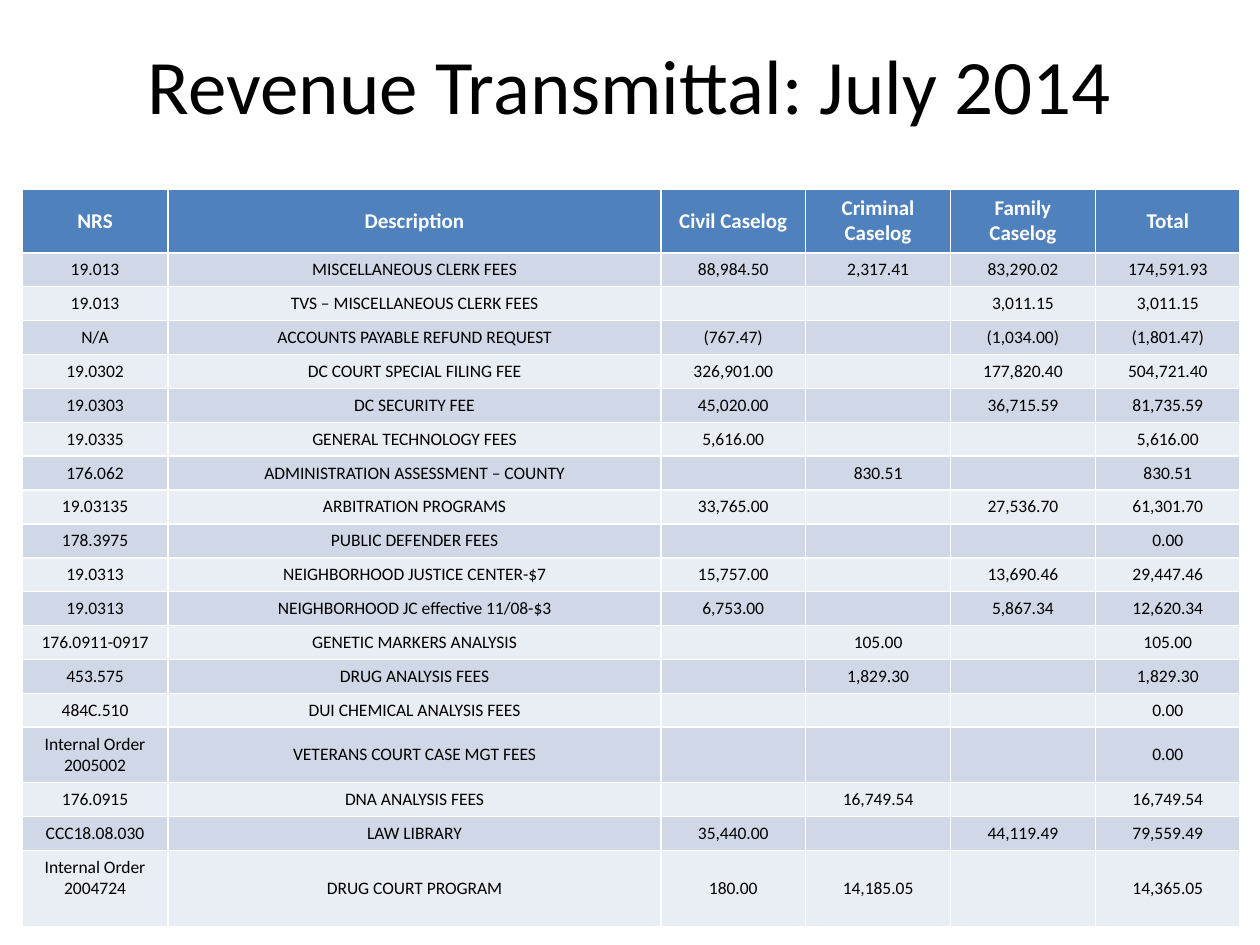
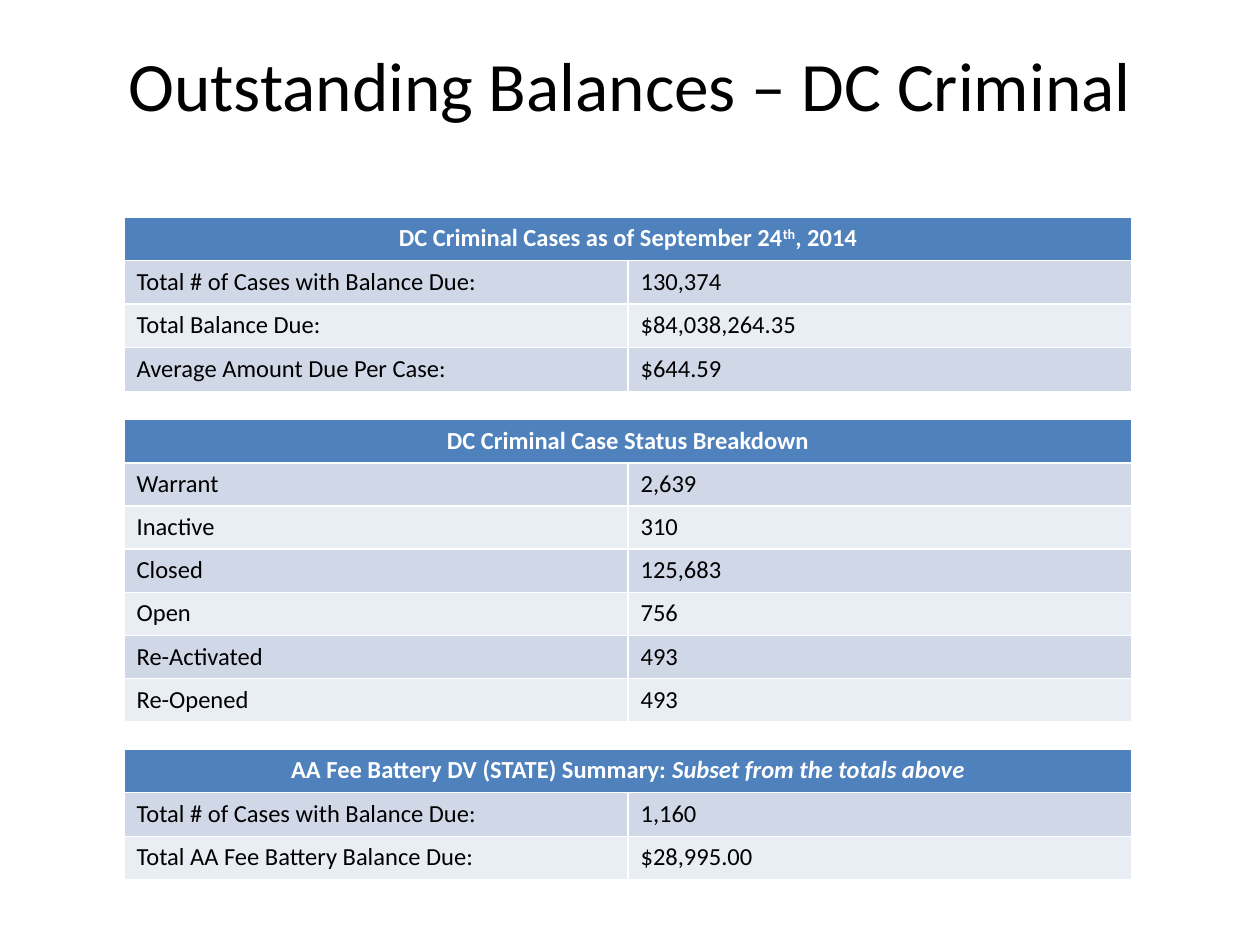
import pptx
import pptx.dml.color
import pptx.enum.text
import pptx.util

Cm = pptx.util.Cm
Pt = pptx.util.Pt
RGBColor = pptx.dml.color.RGBColor
Align = pptx.enum.text.PP_ALIGN
Anchor = pptx.enum.text.MSO_ANCHOR

# Shared look
FONT = "Calibri"
BLACK = RGBColor(0x00, 0x00, 0x00)
WHITE = RGBColor(0xFF, 0xFF, 0xFF)
HEADER_BLUE = RGBColor(0x4F, 0x81, 0xBD)
BANDS = (RGBColor(0xD0, 0xD8, 0xE8), RGBColor(0xE9, 0xED, 0xF4))
TITLE_ONLY = 5

# Revenue slide: sizes in centimetres
REVENUE_COLUMNS = [2.95, 9.93] + [2.92] * 4
REVENUE_ROW = 0.68
REVENUE_HEADER = ["NRS", "Description", "Civil Caselog", "Criminal Caselog",
                  "Family Caselog", "Total"]
REVENUE_ROWS = [
    ["19.013", "MISCELLANEOUS CLERK FEES", "88,984.50", "2,317.41", "83,290.02", "174,591.93"],
    ["19.013", "TVS – MISCELLANEOUS CLERK FEES", "", "", "3,011.15", "3,011.15"],
    ["N/A", "ACCOUNTS PAYABLE REFUND REQUEST", "(767.47)", "", "(1,034.00)", "(1,801.47)"],
    ["19.0302", "DC COURT SPECIAL FILING FEE", "326,901.00", "", "177,820.40", "504,721.40"],
    ["19.0303", "DC SECURITY FEE", "45,020.00", "", "36,715.59", "81,735.59"],
    ["19.0335", "GENERAL TECHNOLOGY FEES", "5,616.00", "", "", "5,616.00"],
    ["176.062", "ADMINISTRATION ASSESSMENT – COUNTY", "", "830.51", "", "830.51"],
    ["19.03135", "ARBITRATION PROGRAMS", "33,765.00", "", "27,536.70", "61,301.70"],
    ["178.3975", "PUBLIC DEFENDER FEES", "", "", "", "0.00"],
    ["19.0313", "NEIGHBORHOOD JUSTICE CENTER-$7", "15,757.00", "", "13,690.46", "29,447.46"],
    ["19.0313", "NEIGHBORHOOD JC effective 11/08-$3", "6,753.00", "", "5,867.34", "12,620.34"],
    ["176.0911-0917", "GENETIC MARKERS ANALYSIS", "", "105.00", "", "105.00"],
    ["453.575", "DRUG ANALYSIS FEES", "", "1,829.30", "", "1,829.30"],
    ["484C.510", "DUI CHEMICAL ANALYSIS FEES", "", "", "", "0.00"],
    ["Internal Order 2005002", "VETERANS COURT CASE MGT FEES", "", "", "", "0.00"],
    ["176.0915", "DNA ANALYSIS FEES", "", "16,749.54", "", "16,749.54"],
    ["CCC18.08.030", "LAW LIBRARY", "35,440.00", "", "44,119.49", "79,559.49"],
    ["Internal Order 2004724", "DRUG COURT PROGRAM", "180.00", "14,185.05", "", "14,365.05"],
]

# Balances slide: top, row height, heading runs with their format, rows
BALANCE_TABLES = [
    (4.37, 0.88,
     [("DC Criminal Cases as of September 24", {}), ("th", {"superscript": True}),
      (", 2014", {})],
     [["Total # of Cases with Balance Due:", "130,374"],
      ["Total Balance Due:", "$84,038,264.35"],
      ["Average Amount Due Per Case:", "$644.59"]]),
    (8.46, 0.87,
     [("DC Criminal Case Status Breakdown", {})],
     [["Warrant", "2,639"], ["Inactive", "310"], ["Closed", "125,683"],
      ["Open", "756"], ["Re-Activated", "493"], ["Re-Opened", "493"]]),
    (15.1, 0.88,
     [("AA Fee Battery DV (STATE) Summary: ", {}),
      ("Subset from the totals above", {"italic": True})],
     [["Total # of Cases with Balance Due:", "1,160"],
      ["Total AA Fee Battery Balance Due:", "$28,995.00"]]),
]


def add_text(paragraph, text, size, color=BLACK, bold=False, italic=False,
             superscript=False, align=Align.LEFT):
    paragraph.alignment = align
    if not text:
        # An empty cell keeps the text size so that its row stays low
        paragraph._p.get_or_add_endParaRPr().set("sz", str(size * 100))
        return
    run = paragraph.add_run()
    run.text = text
    font = run.font
    font.name, font.size, font.color.rgb = FONT, Pt(size), color
    font.bold, font.italic = bold, italic
    if superscript:
        font._element.set("baseline", "30000")


def add_titled_slide(presentation, title, size):
    slide = presentation.slides.add_slide(presentation.slide_layouts[TITLE_ONLY])
    shape = slide.shapes.title
    shape.left, shape.top, shape.width, shape.height = Cm(1.27), Cm(0.2), Cm(22.86), Cm(2.97)
    shape.text_frame.vertical_anchor = Anchor.MIDDLE
    add_text(shape.text_frame.paragraphs[0], title, size, align=Align.CENTER)
    return slide


def add_banded_table(slide, left, top, column_widths, row_heights):
    """Add an empty table with a blue header row and two alternating bands."""
    frame = slide.shapes.add_table(len(row_heights), len(column_widths), Cm(left), Cm(top),
                                   Cm(sum(column_widths)), Cm(sum(row_heights)))
    table = frame.table
    for column, width in zip(table.columns, column_widths):
        column.width = Cm(width)
    for index, (row, height) in enumerate(zip(table.rows, row_heights)):
        row.height = Cm(height)
        for cell in row.cells:
            cell.fill.solid()
            cell.fill.fore_color.rgb = BANDS[(index - 1) % 2] if index else HEADER_BLUE
    return table


def fill_row(table, index, texts, anchor=Anchor.TOP, **text_format):
    for cell, text in zip(table.rows[index].cells, texts):
        cell.vertical_anchor = anchor
        add_text(cell.text_frame.paragraphs[0], text, **text_format)


def add_revenue_table(slide):
    heights = [1.24] + [REVENUE_ROW] * len(REVENUE_ROWS)
    # The two rows with a wrapped order number are taller
    heights[15], heights[-1] = 1.12, 1.53
    table = add_banded_table(slide, 0.44, 3.81, REVENUE_COLUMNS, heights)
    fill_row(table, 0, REVENUE_HEADER, anchor=Anchor.MIDDLE, size=12, color=WHITE,
             bold=True, align=Align.CENTER)
    for index, texts in enumerate(REVENUE_ROWS, start=1):
        fill_row(table, index, texts, anchor=Anchor.MIDDLE, size=10, align=Align.CENTER)
    table.cell(len(REVENUE_ROWS), 0).vertical_anchor = Anchor.TOP


def add_balance_table(slide, top, row_height, heading, rows):
    table = add_banded_table(slide, 2.5, top, [10.16] * 2, [row_height] * (len(rows) + 1))
    header = table.cell(0, 0)
    header.merge(table.cell(0, 1))
    for text, text_format in heading:
        add_text(header.text_frame.paragraphs[0], text, 14, color=WHITE, bold=True,
                 align=Align.CENTER, **text_format)
    for index, texts in enumerate(rows, start=1):
        fill_row(table, index, texts, size=14)


def main():
    presentation = pptx.Presentation()
    presentation.slide_width, presentation.slide_height = Cm(25.4), Cm(19.05)

    # Revenue by fee
    slide = add_titled_slide(presentation, "Revenue Transmittal: July 2014", 44)
    add_revenue_table(slide)

    # Outstanding balances
    slide = add_titled_slide(presentation, "Outstanding Balances – DC Criminal", 39.6)
    for balance_table in BALANCE_TABLES:
        add_balance_table(slide, *balance_table)

    presentation.save("out.pptx")


if __name__ == "__main__":
    main()
